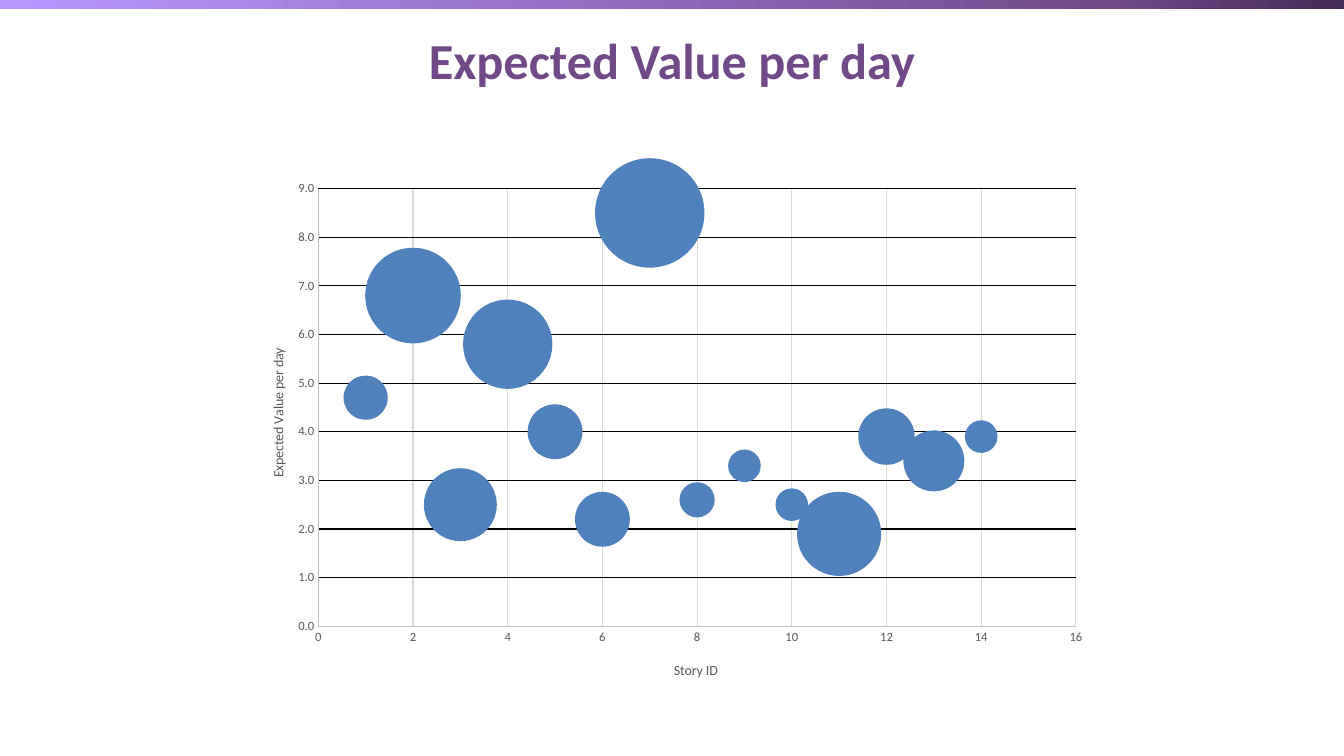
"""Build the expected value per day slide with its bubble chart."""
from copy import deepcopy
from dataclasses import dataclass

from lxml.etree import SubElement
from pptx import Presentation
from pptx.chart.axis import _BaseAxis
from pptx.chart.chart import Chart
from pptx.chart.data import BubbleChartData
from pptx.dml.color import RGBColor
from pptx.enum.chart import XL_CHART_TYPE, XL_TICK_MARK
from pptx.enum.shapes import MSO_SHAPE
from pptx.enum.text import MSO_ANCHOR, PP_ALIGN
from pptx.oxml.ns import qn
from pptx.slide import Slide
from pptx.util import Pt

FONT = "Calibri"
PURPLE = RGBColor(0x71, 0x49, 0x89)
DARK_PURPLE = RGBColor(0x44, 0x2A, 0x58)
LILAC = RGBColor(0xBA, 0x97, 0xFF)
BLUE = RGBColor(0x4F, 0x81, 0xBD)
BLACK = RGBColor(0x00, 0x00, 0x00)
GREY = RGBColor(0x59, 0x59, 0x59)
AXIS_GREY = RGBColor(0xBF, 0xBF, 0xBF)
GRID_GREY = RGBColor(0xD9, 0xD9, 0xD9)


@dataclass(frozen=True)
class Story:
    value: float
    size: float


@dataclass(frozen=True)
class AxisStyle:
    title: str
    title_place: dict[str, float]
    maximum: float
    step: float
    number_format: str
    grid_color: RGBColor


STORIES = [
    Story(4.7, 2.2), Story(6.8, 10.3), Story(2.5, 6), Story(5.8, 9),
    Story(4, 3.4), Story(2.2, 3.4), Story(8.5, 13.5), Story(2.6, 1.4),
    Story(3.3, 1.2), Story(2.5, 1.2), Story(1.9, 8), Story(3.9, 3.6),
    Story(3.4, 4.2), Story(3.9, 1.2),
]
STORY_AXIS = AxisStyle("Story ID", {"x": 0.5, "y": 0.93}, 16, 2, "General", GRID_GREY)
VALUE_AXIS = AxisStyle("Expected Value per day", {"x": 0.03, "y": 0.35}, 9, 1, "0.0", BLACK)
PLOT_PLACE = {"x": 0.09, "y": 0.06, "w": 0.88, "h": 0.81}


def place(parent, index: int, fractions: dict[str, float], inner: bool = False) -> None:
    """Give a chart part a fixed place, in fractions of the chart."""
    for old in parent.findall(qn("c:layout")):
        parent.remove(old)
    layout = parent.makeelement(qn("c:layout"))
    parent.insert(index, layout)
    manual = SubElement(layout, qn("c:manualLayout"))
    if inner:
        SubElement(manual, qn("c:layoutTarget"), val="inner")
    for key in ("x", "y"):
        SubElement(manual, qn(f"c:{key}Mode"), val="edge")
    for key, fraction in fractions.items():
        SubElement(manual, qn(f"c:{key}"), val=str(fraction))


def style_axis(axis: _BaseAxis, style: AxisStyle) -> None:
    """Set scale, lines, labels and title of an axis."""
    axis.minimum_scale, axis.maximum_scale = 0, style.maximum
    axis.major_unit = style.step
    axis.major_tick_mark = axis.minor_tick_mark = XL_TICK_MARK.NONE
    axis.has_major_gridlines = True
    for line, color in ((axis.format.line, AXIS_GREY),
                        (axis.major_gridlines.format.line, style.grid_color)):
        line.color.rgb = color
        line.width = Pt(0.75)
    labels = axis.tick_labels
    labels.number_format = style.number_format
    labels.number_format_is_linked = False
    para = axis.axis_title.text_frame.paragraphs[0]
    para.text = style.title
    for font, size in ((labels.font, 9), (para.font, 10)):
        font.name, font.size, font.bold = FONT, Pt(size), False
        font.color.rgb = GREY
    place(axis.axis_title._element, 1, style.title_place)


def add_bar(page: Slide) -> None:
    """Draw the gradient bar along the top edge."""
    bar = page.shapes.add_shape(MSO_SHAPE.RECTANGLE, Pt(0), Pt(0), Pt(960), Pt(6.5))
    bar.shadow.inherit = False
    bar.line.fill.background()
    bar.fill.gradient()
    bar.fill.gradient_angle = 180
    stop_list = bar._element.spPr.find(f".//{qn('a:gsLst')}")
    stop_list.append(deepcopy(stop_list[-1]))
    stops = ((0, DARK_PURPLE), (0.17, PURPLE), (1, LILAC))
    for stop, (position, color) in zip(bar.fill.gradient_stops, stops):
        stop.position = position
        stop.color.rgb = color


def add_title(page: Slide) -> None:
    """Fill and place the title."""
    title = page.shapes.title
    title.left, title.top, title.width, title.height = Pt(26.6), Pt(5.8), Pt(907), Pt(73.4)
    title.text_frame.vertical_anchor = MSO_ANCHOR.MIDDLE
    para = title.text_frame.paragraphs[0]
    para.text = "Expected Value per day"
    para.alignment = PP_ALIGN.CENTER
    font = para.font
    font.name, font.size, font.bold = FONT, Pt(36), True
    font.color.rgb = PURPLE


def add_bubbles(page: Slide) -> None:
    """Add the bubble chart of all stories."""
    data = BubbleChartData()
    points = data.add_series("Series 1")
    for story_id, story in enumerate(STORIES, 1):
        points.add_data_point(story_id, story.value, story.size)
    chart: Chart = page.shapes.add_chart(
        XL_CHART_TYPE.BUBBLE, Pt(172), Pt(111.6), Pt(615), Pt(386), data).chart
    chart.has_title = chart.has_legend = False
    chart.font.name, chart.font.size = FONT, Pt(10)
    chart.font.color.rgb = BLACK
    series = chart.plots[0].series[0]
    series.format.fill.solid()
    series.format.fill.fore_color.rgb = BLUE
    series.format.line.fill.background()
    style_axis(chart.category_axis, STORY_AXIS)
    style_axis(chart.value_axis, VALUE_AXIS)
    place(chart._chartSpace.chart.plotArea, 0, PLOT_PLACE, inner=True)


def main() -> None:
    """Build and save the deck."""
    deck = Presentation()
    deck.slide_width, deck.slide_height = Pt(960), Pt(540)
    page = deck.slides.add_slide(deck.slide_layouts[5])
    add_bar(page)
    add_title(page)
    add_bubbles(page)
    deck.save("out.pptx")


if __name__ == "__main__":
    main()
